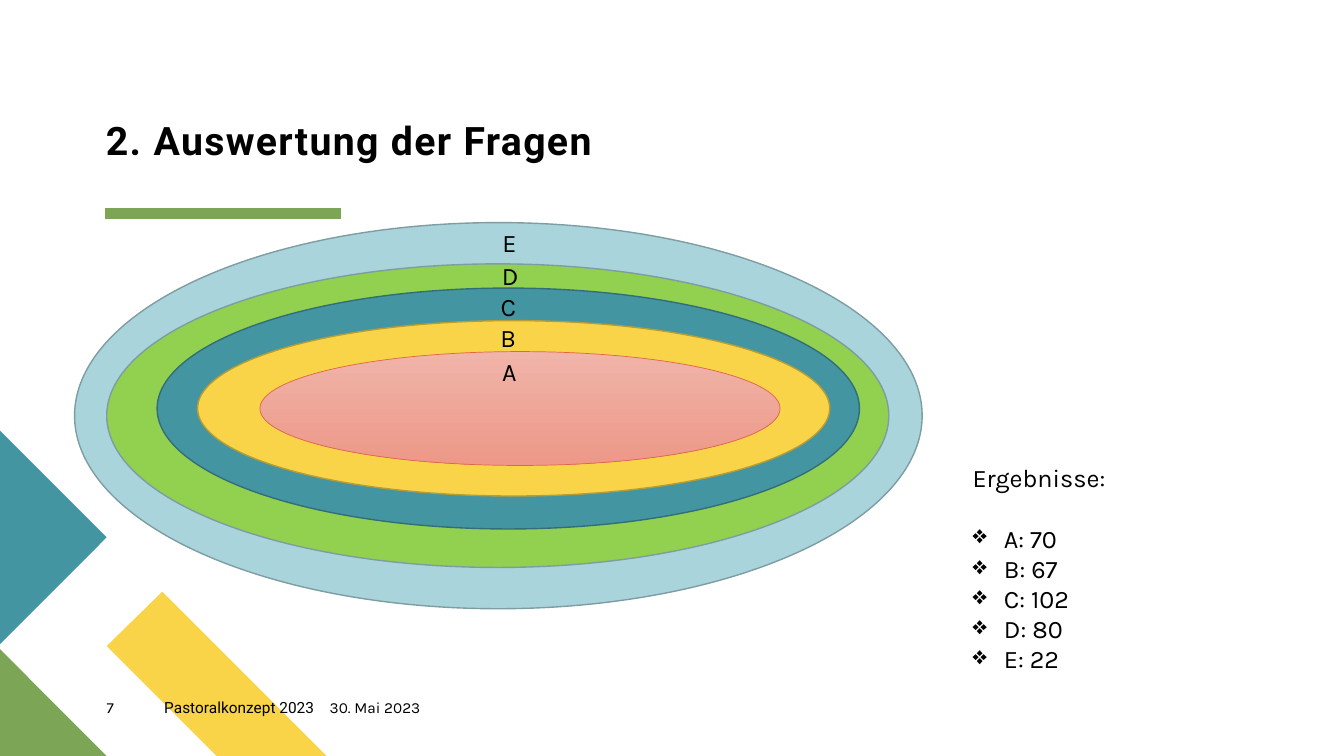
import pptx
import pptx.util
import pptx.dml.color
import pptx.enum.shapes
import pptx.enum.text
import pptx.oxml
import pptx.oxml.ns

Cm = pptx.util.Cm
Pt = pptx.util.Pt
ALIGN = pptx.enum.text.PP_ALIGN
ANCHOR = pptx.enum.text.MSO_ANCHOR

COLORS = {
    "black": "000000",
    "yellow": "F9D448",
    "green": "7CA655",
    "teal": "4495A2",
    "pale blue": "A9D4DB",
    "lime": "92D050",
    "blue edge": "7D9DA2",
    "teal edge": "326E78",
    "yellow edge": "B89D35",
    "red edge": "E06742",
    "rose top": "F0B4A9",
    "rose bottom": "ED9888",
}

CORNER_SHAPES = [
    ("yellow", [(8.23, 19.05), (5.46, 19.05), (2.69, 16.28), (4.09, 14.91)]),
    ("green", [(2.69, 19.05), (0, 19.05), (0, 16.36)]),
    ("teal", [(0, 10.85), (2.69, 13.54), (0, 16.23)]),
]

TITLE = "2. Auswertung der Fragen"
TITLE_BOX = (2.67, 2.44, 13.72, 1.7)
TITLE_RULE = (2.64, 5.38, 8.59, 5.38)

FOOTERS = [
    ("7", "Karla", 2.69, 1.45),
    ("Pastoralkonzept 2023", "Roboto", 4.14, 4.17),
    ("30. Mai 2023", "Karla", 8.31, 3.66),
]
FOOTER_TOP, FOOTER_HEIGHT = 17.58, 0.69

RINGS = [
    ((1.88, 5.61, 21.36, 9.73), ["pale blue"], "blue edge", 1),
    ((2.69, 6.65, 19.71, 7.65), ["lime"], "blue edge", 1),
    ((3.96, 7.26, 17.7, 6.07), ["teal"], "teal edge", 1),
    ((4.98, 8.08, 15.93, 4.42), ["yellow"], "yellow edge", 1),
    ((6.55, 8.86, 13.11, 2.87), ["rose top", "rose bottom"], "red edge", 0.5),
]

RING_LABELS = [
    ("E", 12.22, 5.61),
    ("D", 12.24, 6.43),
    ("C", 12.19, 7.21),
    ("B", 12.19, 8),
    ("A", 12.22, 8.86),
]
LABEL_WIDTH, LABEL_HEIGHT = 1.24, 1.02

RESULTS_HEADING = "Ergebnisse:"
RESULTS = {"A": 70, "B": 67, "C": 102, "D": 80, "E": 22}
RESULTS_BOX = (24.26, 11.53, 7.8, 6.4)
BULLET_INDENT = 0.79


def color(name):
    return pptx.dml.color.RGBColor.from_string(COLORS[name])


def add_corner_shape(slide, fill, points):
    corners = [(Cm(x), Cm(y)) for x, y in points]
    builder = slide.shapes.build_freeform(*corners[0])
    builder.add_line_segments(corners[1:], close=True)
    shape = builder.convert_to_shape()
    shape.shadow.inherit = False
    shape.fill.solid()
    shape.fill.fore_color.rgb = color(fill)
    shape.line.fill.background()


def add_title_rule(slide):
    rule = slide.shapes.add_connector(
        pptx.enum.shapes.MSO_CONNECTOR.STRAIGHT, *map(Cm, TITLE_RULE))
    rule.line.color.rgb = color("green")
    rule.line.width = Pt(8)
    rule._element.spPr.append(pptx.oxml.parse_xml(
        f'<a:effectLst {pptx.oxml.ns.nsdecls("a")}/>'))


def add_ring(slide, box, fills, edge, width):
    ring = slide.shapes.add_shape(
        pptx.enum.shapes.MSO_SHAPE.OVAL, *map(Cm, box))
    ring.shadow.inherit = False
    if len(fills) == 1:
        ring.fill.solid()
        ring.fill.fore_color.rgb = color(fills[0])
    else:
        ring.fill.gradient()
        ring.fill.gradient_angle = 270
        for stop, name in zip(ring.fill.gradient_stops, fills):
            stop.color.rgb = color(name)
    ring.line.color.rgb = color(edge)
    ring.line.width = Pt(width)


def add_text_box(slide, box, inset=True):
    frame = slide.shapes.add_textbox(*map(Cm, box)).text_frame
    frame.word_wrap = True
    if inset:
        frame.auto_size = pptx.enum.text.MSO_AUTO_SIZE.SHAPE_TO_FIT_TEXT
    else:
        frame.margin_left = frame.margin_right = 0
        frame.margin_top = frame.margin_bottom = 0
    return frame


def add_run(paragraph, text, size, font="Karla"):
    run = paragraph.add_run()
    run.text = text
    run.font.name = font
    run.font.size = Pt(size)
    run.font.color.rgb = color("black")
    return run


def add_title(slide):
    frame = add_text_box(slide, TITLE_BOX, inset=False)
    frame.vertical_anchor = ANCHOR.BOTTOM
    paragraph = frame.paragraphs[0]
    paragraph.line_spacing = 0.9
    run = add_run(paragraph, TITLE, 28, "Roboto")
    run.font.bold = True
    run.font._element.set("spc", "100")


def add_results(slide):
    frame = add_text_box(slide, RESULTS_BOX)
    heading = frame.paragraphs[0]
    heading.space_after = Pt(21.5)
    add_run(heading, RESULTS_HEADING, 18)
    for ring, count in RESULTS.items():
        paragraph = frame.add_paragraph()
        properties = paragraph._element.get_or_add_pPr()
        properties.set("marL", str(Cm(BULLET_INDENT)))
        properties.set("indent", str(-Cm(BULLET_INDENT)))
        properties.append(pptx.oxml.parse_xml(
            f'<a:buChar {pptx.oxml.ns.nsdecls("a")} char="❖"/>'))
        add_run(paragraph, f"{ring}: {count}", 18)


def main():
    presentation = pptx.Presentation()
    presentation.slide_width = Cm(33.87)
    presentation.slide_height = Cm(19.05)
    slide = presentation.slides.add_slide(presentation.slide_layouts[6])

    for fill, points in CORNER_SHAPES:
        add_corner_shape(slide, fill, points)
    add_title_rule(slide)
    add_title(slide)
    for text, font, left, width in FOOTERS:
        frame = add_text_box(
            slide, (left, FOOTER_TOP, width, FOOTER_HEIGHT), inset=False)
        add_run(frame.paragraphs[0], text, 11, font)
    for ring in RINGS:
        add_ring(slide, *ring)
    for letter, left, top in RING_LABELS:
        frame = add_text_box(slide, (left, top, LABEL_WIDTH, LABEL_HEIGHT))
        frame.paragraphs[0].alignment = ALIGN.CENTER
        add_run(frame.paragraphs[0], letter, 18)
    add_results(slide)

    presentation.save("out.pptx")


if __name__ == "__main__":
    main()
